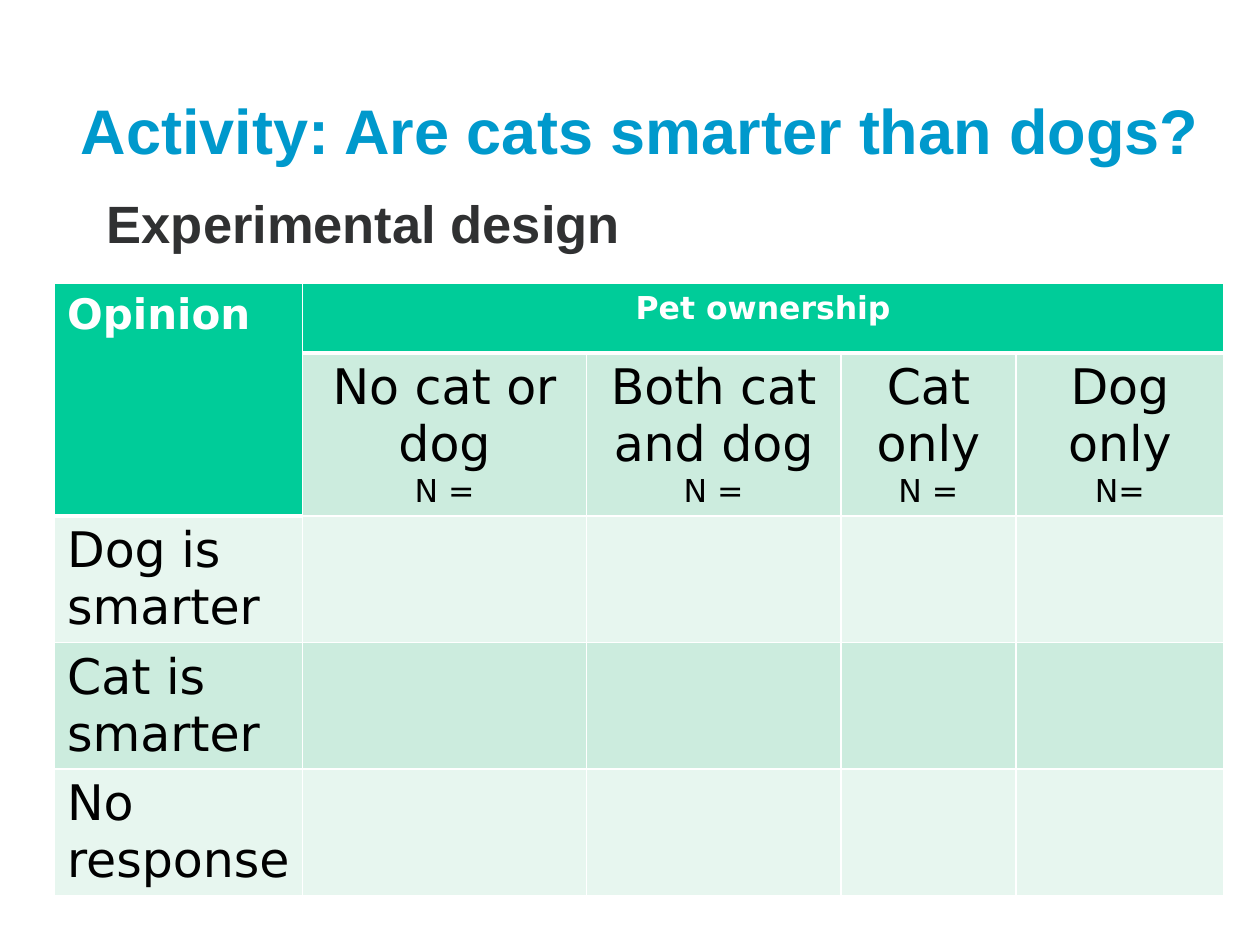
from lxml.etree import SubElement
from pptx import Presentation
from pptx.dml.color import RGBColor
from pptx.enum.text import MSO_ANCHOR, PP_ALIGN
from pptx.oxml import parse_xml
from pptx.oxml.ns import nsdecls, qn
from pptx.util import Cm, Pt

COLORS = {
    "title": "0099CC",
    "body": "303132",
    "head": "00CC99",
    "dark": "CCECDE",
    "light": "E7F6EF",
    "white": "FFFFFF",
    "black": "000000",
}
WIDTHS = [5, 5.72, 5.13, 3.53, 4.19]
HEIGHTS = [1.4, 3.24, 2.55, 2.55, 2.55]
GROUPS = [
    ("No cat or dog", "N ="),
    ("Both cat and dog", "N ="),
    ("Cat only", "N ="),
    ("Dog only", "N="),
]
ANSWERS = ["Dog is smarter", "Cat is smarter", "No response"]


class Deck:
    def __init__(self):
        self.prs = Presentation()
        self.prs.slide_width, self.prs.slide_height = Cm(25.4), Cm(19.05)
        self.slide = self.prs.slides.add_slide(self.prs.slide_layouts[1])

    def style(self, para, size, color, font, bold=False, align=PP_ALIGN.LEFT):
        para.alignment = align
        for run in para.runs:
            run.font.size, run.font.name, run.font.bold = Pt(size), font, bold
            run.font.color.rgb = RGBColor.from_string(COLORS[color])

    def holder(self, index, text, box, size, color, align, anchor):
        shape = self.slide.placeholders[index]
        shape.left, shape.top, shape.width, shape.height = map(Cm, box)
        frame = shape.text_frame
        frame.text = text
        frame.vertical_anchor = anchor
        para = frame.paragraphs[0]
        props = para._p.get_or_add_pPr()
        props.set("marL", "0")
        props.set("indent", "0")
        SubElement(props, qn("a:buNone"))
        self.style(para, size, color, "Arial", True, align)

    def table(self, left, top):
        frame = self.slide.shapes.add_table(
            len(HEIGHTS), len(WIDTHS), Cm(left), Cm(top),
            Cm(sum(WIDTHS)), Cm(sum(HEIGHTS)))
        grid = frame.table
        grid.first_row = grid.horz_banding = False
        for col, width in zip(grid.columns, WIDTHS):
            col.width = Cm(width)
        for row, height in zip(grid.rows, HEIGHTS):
            row.height = Cm(height)
        return grid

    def paint(self, cell, color, top=1, bottom=1):
        cell.fill.solid()
        cell.fill.fore_color.rgb = RGBColor.from_string(COLORS[color])
        props = cell._tc.get_or_add_tcPr()
        sides = [("L", 1), ("R", 1), ("T", top), ("B", bottom)]
        for spot, (side, width) in enumerate(sides):
            props.insert(spot, parse_xml(
                f'<a:ln{side} {nsdecls("a")} w="{Pt(width)}"><a:solidFill>'
                f'<a:srgbClr val="{COLORS["white"]}"/></a:solidFill></a:ln{side}>'))

    def label(self, cell, lines, sizes, color="black", bold=False,
              align=PP_ALIGN.LEFT):
        cell.text_frame.text = "\n".join(lines)
        for para, size in zip(cell.text_frame.paragraphs, sizes):
            self.style(para, size, color, "DejaVu Sans", bold, align)


def main():
    deck = Deck()
    deck.holder(0, "Activity: Are cats smarter than dogs?", (1.1, 1.7, 23.6, 1.83),
                36, "title", PP_ALIGN.CENTER, MSO_ANCHOR.MIDDLE)
    deck.holder(1, "Experimental design", (1.9, 3.73, 21.6, 1.8),
                30, "body", PP_ALIGN.LEFT, MSO_ANCHOR.TOP)

    grid = deck.table(1.1, 5.72)
    for row in range(len(HEIGHTS)):
        for col in range(len(WIDTHS)):
            last = 1 if col == 0 else 0
            band = "head" if row <= last else "dark" if row % 2 else "light"
            deck.paint(grid.cell(row, col), band,
                       top=3 if row == last + 1 else 1,
                       bottom=3 if row == last else 1)
    grid.cell(0, 0).merge(grid.cell(1, 0))
    grid.cell(0, 1).merge(grid.cell(0, 4))

    deck.label(grid.cell(0, 0), ["Opinion"], [24], "white", True)
    deck.label(grid.cell(0, 1), ["Pet ownership"], [18], "white", True,
               PP_ALIGN.CENTER)
    for col, group in enumerate(GROUPS, 1):
        deck.label(grid.cell(1, col), group, [28, 18], align=PP_ALIGN.CENTER)
    for row, answer in enumerate(ANSWERS, 2):
        deck.label(grid.cell(row, 0), [answer], [28])
    deck.prs.save("out.pptx")


if __name__ == "__main__":
    main()
